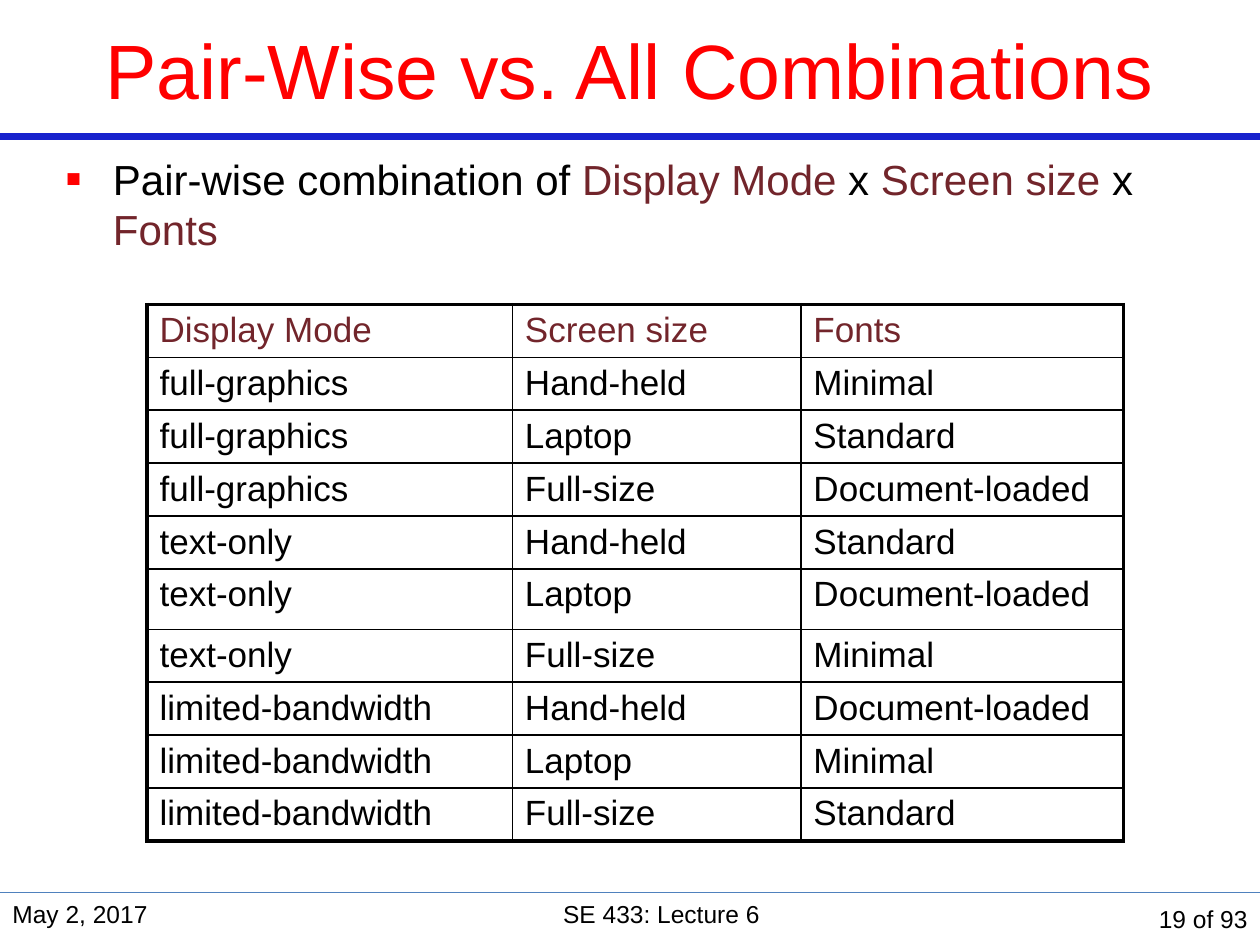
from dataclasses import dataclass

from lxml import etree
from pptx import Presentation
from pptx.dml.color import RGBColor
from pptx.enum.shapes import MSO_CONNECTOR
from pptx.enum.text import MSO_ANCHOR, PP_ALIGN
from pptx.oxml.ns import qn
from pptx.util import Inches, Pt

STRAIGHT = MSO_CONNECTOR.STRAIGHT
TOP, MIDDLE = MSO_ANCHOR.TOP, MSO_ANCHOR.MIDDLE
LEFT, CENTER, RIGHT = PP_ALIGN.LEFT, PP_ALIGN.CENTER, PP_ALIGN.RIGHT


@dataclass(frozen=True)
class Theme:
    face: str = "Arial"
    red: str = "FF0000"
    maroon: str = "72252B"
    black: str = "000000"
    blue: str = "1822CD"
    steel: str = "4F81BD"
    title: int = 44
    body: int = 24
    cell: int = 20
    foot: int = 14
    thick: float = 2.25
    thin: float = 1


THEME = Theme()

# The page is a grid of 120 columns by 90 rows
COLS, ROWS = 120, 90
UNIT = Inches(10) // COLS

MODES = ["full-graphics", "text-only", "limited-bandwidth"]
SIZES = ["Hand-held", "Laptop", "Full-size"]
FONTS = ["Minimal", "Standard", "Document-loaded"]
# Font index for each screen size, one row per display mode
PAIRS = [(0, 1, 2), (1, 2, 0), (2, 0, 1)]


def place(shape, box):
    shape.left, shape.top, shape.width, shape.height = (n * UNIT for n in box)


def style(font, size, color):
    font.name, font.size = THEME.face, Pt(size)
    font.color.rgb = RGBColor.from_string(color)


def add_rule(slide, row, color, width):
    line = slide.shapes.add_connector(
        STRAIGHT, 0, row * UNIT, COLS * UNIT, row * UNIT)
    line.line.color.rgb = RGBColor.from_string(color)
    line.line.width = Pt(width)
    etree.SubElement(line.element.spPr, qn("a:effectLst"))


def add_bullet(para, char, color, size):
    props = para._p.get_or_add_pPr()
    props.set("marL", str(Inches(0.38)))
    props.set("indent", str(-Inches(0.38)))
    tint = etree.SubElement(props, qn("a:buClr"))
    etree.SubElement(tint, qn("a:srgbClr"), val=color)
    etree.SubElement(props, qn("a:buSzPct"), val=str(size * 1000))
    etree.SubElement(props, qn("a:buFont"), typeface=THEME.face)
    etree.SubElement(props, qn("a:buChar"), char=char)


def fill_title(slide, box):
    title = slide.shapes.title
    place(title, box)
    title.text_frame.text = "Pair-Wise vs. All Combinations"
    title.text_frame.vertical_anchor = MIDDLE
    para = title.text_frame.paragraphs[0]
    para.alignment = CENTER
    style(para.font, THEME.title, THEME.red)


def fill_body(slide, box):
    body = slide.placeholders[1]
    place(body, box)
    para = body.text_frame.paragraphs[0]
    add_bullet(para, "▪", THEME.red, 114)
    para.space_before = Pt(THEME.body * 0.2)
    style(para.font, THEME.body, THEME.black)
    parts = ["Pair-wise combination of ", "Display Mode ", "x ",
             "Screen size ", "x", " Fonts"]
    for i, text in enumerate(parts):
        run = para.add_run()
        run.text = text
        color = THEME.maroon if i % 2 else THEME.black
        run.font.color.rgb = RGBColor.from_string(color)


def set_edges(cell, outer):
    """Draw the four sides; those named in outer are thick."""
    props = cell._tc.get_or_add_tcPr()
    for side in "LRTB":
        width = THEME.thick if side in outer else THEME.thin
        edge = etree.SubElement(props, qn("a:ln" + side), w=str(Pt(width)))
        paint = etree.SubElement(edge, qn("a:solidFill"))
        etree.SubElement(paint, qn("a:srgbClr"), val=THEME.black)


def add_grid(slide, box):
    rows = [["Display Mode", "Screen size", "Fonts"]]
    rows += [[mode, size, FONTS[pick]]
             for mode, picks in zip(MODES, PAIRS)
             for size, pick in zip(SIZES, picks)]
    widths = [2.9, 2.29, 2.56]
    last, end = len(rows) - 1, len(widths) - 1
    table = slide.shapes.add_table(
        len(rows), len(widths), *(n * UNIT for n in box)).table
    table.first_row = table.horz_banding = False
    for col, width in zip(table.columns, widths):
        col.width = Inches(width)
    for r, texts in enumerate(rows):
        # The sixth row is a little taller than the rest
        table.rows[r].height = Inches(0.48 if r == 5 else 0.42)
        for c, text in enumerate(texts):
            cell = table.cell(r, c)
            cell.text = text
            color = THEME.black if r else THEME.maroon
            style(cell.text_frame.paragraphs[0].font, THEME.cell, color)
            sides = {"L": c == 0, "R": c == end, "T": r == 0, "B": r == last}
            set_edges(cell, [side for side, on in sides.items() if on])
            cell.fill.background()


def add_foot(slide, box):
    left, top, width, height = box
    parts = [("May 2, 2017", 26, LEFT, TOP),
             ("SE 433: Lecture 6", 74, CENTER, TOP),
             ("19 of 93", width - 100, RIGHT, MIDDLE)]
    for text, span, align, anchor in parts:
        frame = slide.shapes.add_textbox(
            left * UNIT, top * UNIT, span * UNIT, height * UNIT).text_frame
        frame.word_wrap = True
        frame.vertical_anchor = anchor
        frame.text = text
        para = frame.paragraphs[0]
        para.alignment = align
        style(para.font, THEME.foot, THEME.black)
        left += span


def main():
    deck = Presentation()
    deck.slide_width, deck.slide_height = COLS * UNIT, ROWS * UNIT
    slide = deck.slides.add_slide(deck.slide_layouts[1])
    # Rules above and below the content
    add_rule(slide, 13, THEME.blue, 4.5)
    add_rule(slide, 85, THEME.steel, 0.75)
    # Content
    fill_title(slide, (0, 0, COLS, 13))
    fill_body(slide, (5, 14, 111, 71))
    add_grid(slide, (14, 29, 93, 51))
    add_foot(slide, (0, 85, COLS, 5))
    deck.save("out.pptx")


if __name__ == "__main__":
    main()
